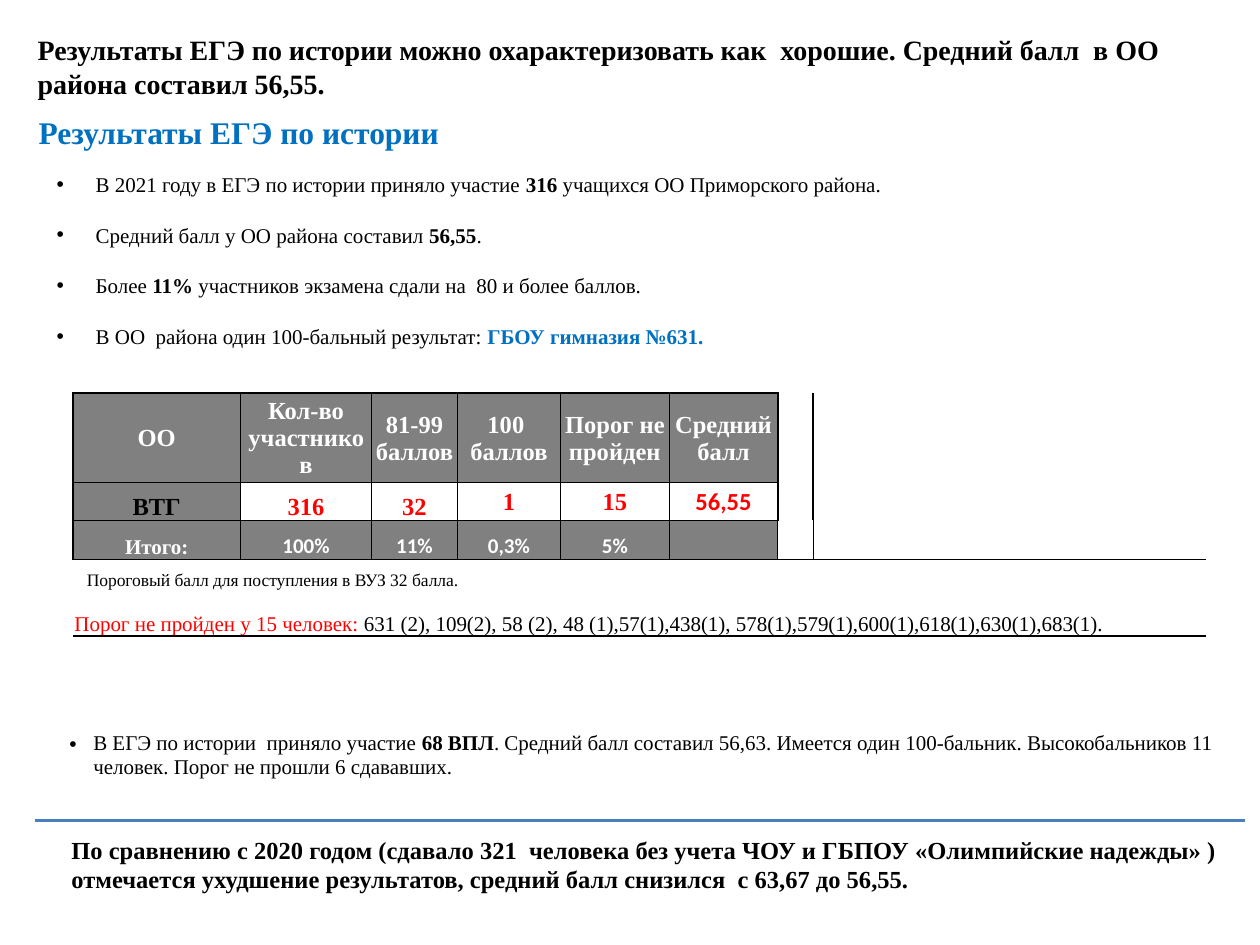
import pptx
import pptx.util
import pptx.dml.color
import pptx.enum.shapes
import pptx.enum.text
from dataclasses import dataclass
from lxml import etree
from pptx.oxml.ns import qn
from pptx.util import Cm, Pt

ANCHOR = pptx.enum.text.MSO_ANCHOR
ALIGN = pptx.enum.text.PP_ALIGN


@dataclass(frozen=True)
class Theme:
    serif: str = "Times New Roman"
    sans: str = "Calibri"
    black: str = "000000"
    white: str = "FFFFFF"
    red: str = "FF0000"
    blue: str = "0070C0"
    rule: str = "4B7EBC"
    grey: str = "808080"
    heading: int = 18
    lead: int = 16
    strong: int = 14
    body: int = 12
    note: int = 10


THEME = Theme()


def rgb(value):
    return pptx.dml.color.RGBColor.from_string(value)


def write(para, spans, size, color=THEME.black, bold=False, font=THEME.serif):
    """Fill a paragraph; each span is (text, own formatting)."""
    para.font.size, para.font.name, para.font.bold = Pt(size), font, bold
    para.font.color.rgb = rgb(color)
    for text, own in spans:
        span = para.add_run()
        span.text = text
        if "bold" in own:
            span.font.bold = own["bold"]
        if "color" in own:
            span.font.color.rgb = rgb(own["color"])


def add_bullet(para, indent):
    props = para._p.get_or_add_pPr()
    props.set("marL", str(indent))
    props.set("indent", str(-indent))
    etree.SubElement(props, qn("a:buFont")).set("typeface", "Arial")
    etree.SubElement(props, qn("a:buChar")).set("char", "•")


def add_text(page, box, text, size, color=THEME.black, bold=False, wrap=True):
    frame = page.shapes.add_textbox(*box).text_frame
    frame.word_wrap = wrap
    write(frame.paragraphs[0], [(text, {})], size, color, bold)


def add_facts(page, box, facts):
    frame = page.shapes.add_textbox(*box).text_frame
    frame.word_wrap = True
    for index, spans in enumerate(facts):
        para = frame.add_paragraph() if index else frame.paragraphs[0]
        add_bullet(para, Cm(0.79))
        para.space_after = Pt(14.6)
        write(para, spans, THEME.body)


def add_grid(page, left, top, columns, rows):
    """Plain table without style, with tight margins in every cell."""
    frame = page.shapes.add_table(len(rows), len(columns), left, top,
                                  Cm(sum(columns)), Cm(sum(rows)))
    table = frame.table
    table.first_row = table.horz_banding = False
    table._tbl.tblPr.find(qn("a:tableStyleId")).text = "{2D5ABB26-0587-4C30-8999-92F81FD0307C}"
    for column, width in zip(table.columns, columns):
        column.width = Cm(width)
    for row, height in zip(table.rows, rows):
        row.height = Cm(height)
    for cell in table.iter_cells():
        cell.margin_left = cell.margin_right = cell.margin_top = Cm(0.03)
        cell.margin_bottom = 0
        cell.vertical_anchor = ANCHOR.BOTTOM
        cell.text_frame.paragraphs[0].font.size = Pt(THEME.note)
    return table


def set_borders(cell, **widths):
    """Draw black borders, given as L, R, T, B in points."""
    props = cell._tc.get_or_add_tcPr()
    for side in "LRTB":
        if side in widths:
            line = etree.SubElement(props, qn(f"a:ln{side}"), w=str(Pt(widths[side])))
            paint = etree.SubElement(line, qn("a:solidFill"))
            etree.SubElement(paint, qn("a:srgbClr"), val=THEME.black)


def add_results(page, left, top):
    columns = [3.38, 2.64, 1.73, 1.57, 0.51, 1.78, 0.41, 1.63, 0.56, 0.71, 2.24] + [1.42] * 4
    table = add_grid(page, left, top, columns, [1.68, 0.76, 0.79, 1.54, 0.56])
    blocks = [(0, 0), (1, 1), (2, 2), (3, 4), (5, 6), (7, 8)]
    texts = [
        ["ОО", "Кол-во участников", "81-99 баллов", "100  баллов", "Порог не пройден", "Средний балл"],
        ["ВТГ", "316", "32", "1", "15", "56,55"],
        ["Итого:", "100%", "11%", "0,3%", "5%", ""],
    ]
    for r, values in enumerate(texts):
        for c, ((first, last), text) in enumerate(zip(blocks, values)):
            cell = table.cell(r, first)
            if last > first:
                cell.merge(table.cell(r, last))
            set_borders(cell, L=0.5 if c else 1, R=1 if c == 5 and r < 2 else 0.5,
                        T=0.5 if r else 1, B=1 if r == 2 else 0.5)
            if r != 1 or c == 0:
                cell.fill.solid()
                cell.fill.fore_color.rgb = rgb(THEME.grey)
            if r == 0 or (r == 1 and c > 2):
                cell.vertical_anchor = ANCHOR.MIDDLE
            color = THEME.white
            if r == 1:
                color = THEME.red if c else THEME.black
            sans = (r == 2 and c > 0) or (r == 1 and c == 5)
            para = cell.text_frame.paragraphs[0]
            para.alignment = ALIGN.CENTER
            if text:
                write(para, [(text, {})], THEME.body if r == 2 else THEME.strong,
                      color, True, THEME.sans if sans else THEME.serif)
        set_borders(table.cell(r, 9), L=0.5 if r == 2 else 1)

    # Schools below the threshold, across the full width
    below = table.cell(3, 0)
    below.merge(table.cell(3, len(columns) - 1))
    for c in range(len(columns)):
        set_borders(table.cell(3, c), T=1)
    write(below.text_frame.paragraphs[0], [
        ("Порог не пройден у 15 человек: ", {"color": THEME.red}),
        ("631 (2), 109(2), 58 (2), 48 (1),57(1),438(1), "
         "578(1),579(1),600(1),618(1),630(1),683(1).", {})], THEME.body)
    for first, last in [(0, 2), (4, 5), (6, 7), (8, 9)]:
        table.cell(4, first).merge(table.cell(4, last))


def add_graduates(page, left, top):
    table = add_grid(page, left, top, [23.72], [1.37, 0.43])
    para = table.cell(0, 0).text_frame.paragraphs[0]
    para._p.remove(para._p.get_or_add_pPr())
    add_bullet(para, Cm(0.48))
    write(para, [
        ("В ЕГЭ по истории  приняло участие ", {}), ("68 ВПЛ", {"bold": True}),
        (". Средний балл составил 56,63. Имеется один 100-бальник. Высокобальников 11 человек. "
         "Порог не прошли 6 сдававших.", {})], THEME.body)


def add_rule(page, left, right, y):
    rule = page.shapes.add_connector(pptx.enum.shapes.MSO_CONNECTOR.STRAIGHT, left, y, right, y)
    rule.line.color.rgb = rgb(THEME.rule)
    rule.line.width = Pt(1.5)
    etree.SubElement(rule._element.spPr, qn("a:effectLst"))


def main():
    deck = pptx.Presentation()
    deck.slide_width, deck.slide_height = Cm(25.4), Cm(19.05)
    page = deck.slides.add_slide(deck.slide_layouts[6])
    strong = {"bold": True}

    # Heading and opening statement
    add_text(page, (Cm(0.53), Cm(2.16), Cm(8.66), Cm(1.02)), "Результаты ЕГЭ по истории",
             THEME.heading, THEME.blue, True, wrap=False)
    add_graduates(page, Cm(1.37), Cm(14.33))
    add_text(page, (Cm(0.51), Cm(0.53), Cm(23.19), Cm(1.63)),
             "Результаты ЕГЭ по истории можно охарактеризовать как  хорошие. "
             "Средний балл  в ОО района составил 56,55.", THEME.lead, bold=True)

    # Key facts
    add_facts(page, (Cm(0.89), Cm(3.33), Cm(24.79), Cm(3.84)), [
        [("В 2021 году в ЕГЭ по истории приняло участие ", {}), ("316 ", strong),
         ("учащихся ОО Приморского района.", {})],
        [("Средний балл у ОО района составил", {}), (" 56,55", strong), (".", {})],
        [("Более", {}), (" 11%", strong), (" участников экзамена сдали на  80 и более баллов.", {})],
        [("В ОО  района один 100-бальный результат: ", {}),
         ("ГБОУ гимназия №631.", {"bold": True, "color": THEME.blue})],
    ])

    # Conclusion, results table and its note
    add_text(page, (Cm(1.19), Cm(16.71), Cm(24), Cm(1.45)),
             "По сравнению с 2020 годом (сдавало 321  человека без учета ЧОУ и ГБПОУ «Олимпийские "
             "надежды» ) отмечается ухудшение результатов, средний балл снизился  с 63,67 до 56,55.",
             THEME.strong, bold=True)
    add_rule(page, Cm(0.71), Cm(25.1), Cm(16.54))
    add_results(page, Cm(1.47), Cm(7.92))
    add_text(page, (Cm(1.5), Cm(11.35), Cm(8.15), Cm(0.69)),
             "Пороговый балл для поступления в ВУЗ 32 балла.", THEME.note, wrap=False)
    deck.save("out.pptx")


if __name__ == "__main__":
    main()
